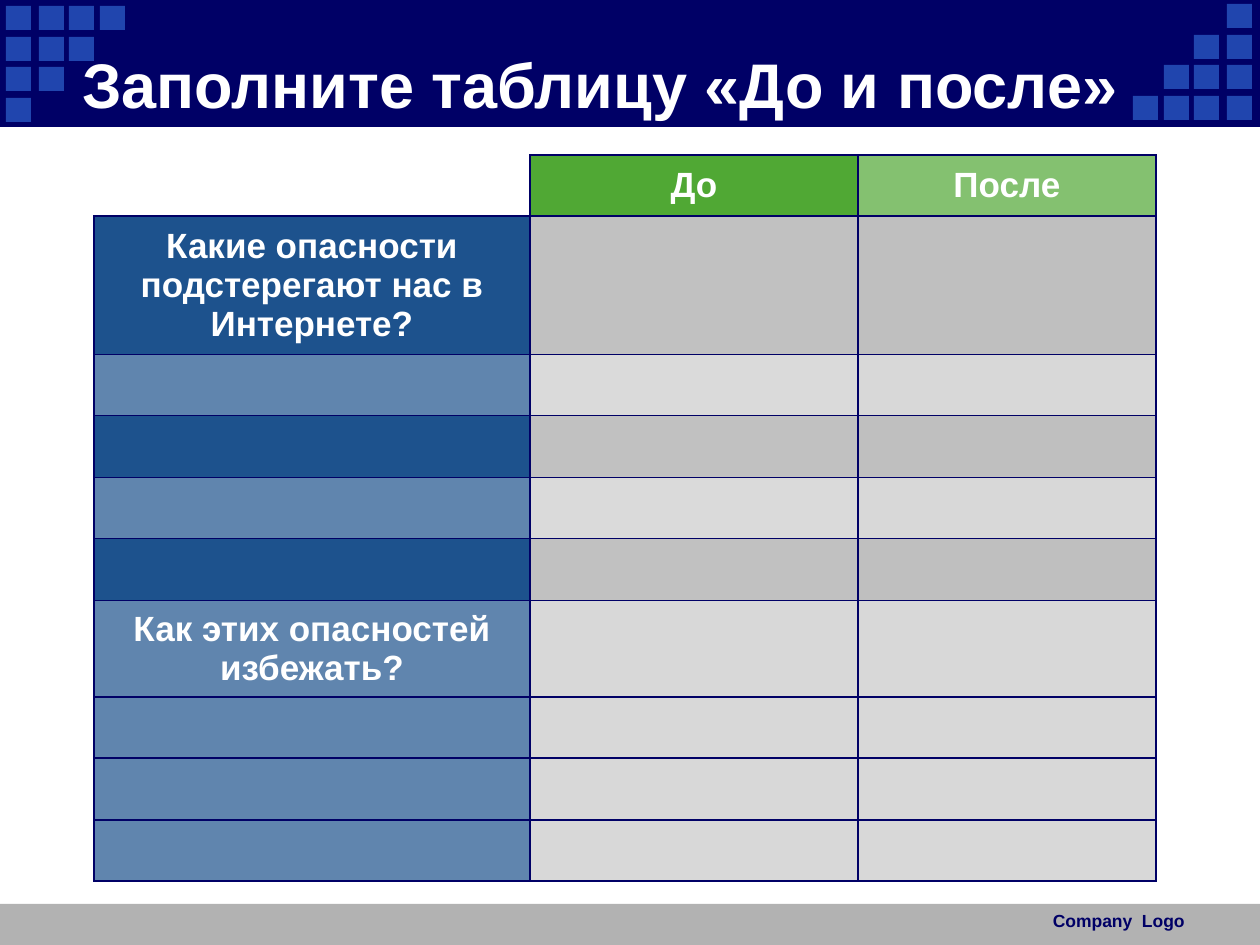
from dataclasses import dataclass

import lxml.etree
import pptx
import pptx.dml.color
import pptx.enum.shapes
import pptx.enum.text
import pptx.oxml.ns
import pptx.util

PX = 914400 // 126
ALIGN = pptx.enum.text.PP_ALIGN
MIDDLE = pptx.enum.text.MSO_ANCHOR.MIDDLE


@dataclass(frozen=True)
class Theme:
    font: str = "Arial"
    navy: str = "000066"
    square: str = "2045AE"
    gray: str = "B2B2B2"
    white: str = "FFFFFF"
    green: str = "50A834"
    blue: str = "1D528D"
    title_size: int = 36
    cell_size: int = 20
    footer_size: int = 10


THEME = Theme()
COLUMNS = [436, 328, 298]
ROWS = [61, 130, 61, 62, 61, 62, 91, 61, 62, 61]
LABELS = {
    (0, 1): "До",
    (0, 2): "После",
    (1, 0): "Какие опасности подстерегают нас в Интернете?",
    (6, 0): "Как этих опасностей избежать?",
}
DARK_BAND = [(THEME.blue, 100), (THEME.gray, 80), (THEME.gray, 82)]
LIGHT_BAND = [(THEME.blue, 70), (THEME.gray, 48), (THEME.gray, 50)]
PLAIN_BAND = [(THEME.blue, 70), (THEME.gray, 50), (THEME.gray, 50)]
HEADER = [None, (THEME.green, 100), (THEME.green, 70)]
BANDS = [HEADER] + [DARK_BAND, LIGHT_BAND] * 2 + [DARK_BAND] + [PLAIN_BAND] * 4


def px(*values):
    return [pptx.util.Emu(v * PX) for v in values]


def rgb(color):
    return pptx.dml.color.RGBColor.from_string(color)


def add_rect(s, box, color):
    sp = s.shapes.add_shape(pptx.enum.shapes.MSO_SHAPE.RECTANGLE, *px(*box))
    sp.shadow.inherit = False
    sp.fill.solid()
    sp.fill.fore_color.rgb = rgb(color)
    sp.line.fill.background()
    return sp


def write(tf, text, size, color, align):
    p = tf.paragraphs[0]
    p.alignment = align
    r = p.add_run()
    r.text = text
    r.font.name = THEME.font
    r.font.size = pptx.util.Pt(size)
    r.font.bold = True
    r.font.color.rgb = rgb(color)


def add_text(s, box, text, size, color, align, anchor):
    tf = s.shapes.add_textbox(*px(*box)).text_frame
    tf.word_wrap = True
    tf.vertical_anchor = anchor
    write(tf, text, size, color, align)


def add_squares(s):
    xs, ys = [6, 39, 69, 100], [6, 37, 67, 98]
    for row, y in enumerate(ys):
        for x in xs[:len(xs) - row]:
            add_rect(s, (x, y, 25, 24), THEME.square)
            add_rect(s, (1233 - x, 102 - y, 25, 24), THEME.square)


def set_borders(cell, sides):
    tc_pr = cell._tc.get_or_add_tcPr()
    qn = pptx.oxml.ns.qn
    for i, side in enumerate(sides):
        ln = lxml.etree.Element(qn(f"a:ln{side}"), w=str(pptx.util.Pt(1)))
        fill = lxml.etree.SubElement(ln, qn("a:solidFill"))
        lxml.etree.SubElement(fill, qn("a:srgbClr"), val=THEME.navy)
        tc_pr.insert(i, ln)


def fill_cell(cell, paint):
    if paint is None:
        cell.fill.background()
        return
    color, alpha = paint
    cell.fill.solid()
    cell.fill.fore_color.rgb = rgb(color)
    if alpha < 100:
        qn = pptx.oxml.ns.qn
        clr = cell._tc.tcPr.find(f".//{qn('a:srgbClr')}")
        lxml.etree.SubElement(clr, qn("a:alpha"), val=str(alpha * 1000))


def add_table(s):
    box = px(94, 155, sum(COLUMNS), sum(ROWS))
    table = s.shapes.add_table(len(ROWS), len(COLUMNS), *box).table
    table.first_row = False
    table.horz_banding = False
    for column, width in zip(table.columns, px(*COLUMNS)):
        column.width = width
    for i, height in enumerate(px(*ROWS)):
        table.rows[i].height = height
        for j, paint in enumerate(BANDS[i]):
            cell = table.cell(i, j)
            cell.vertical_anchor = MIDDLE
            fill_cell(cell, paint)
            set_borders(cell, "LRTB" if paint else "RB")
            if (i, j) in LABELS:
                write(cell.text_frame, LABELS[i, j], THEME.cell_size,
                      THEME.white, ALIGN.CENTER)


def main():
    prs = pptx.Presentation()
    prs.slide_width, prs.slide_height = px(1260, 945)
    s = prs.slides.add_slide(prs.slide_layouts[6])
    add_rect(s, (0, 904, 1260, 41), THEME.gray)
    band = add_rect(s, (0, 0, 1260, 126), THEME.navy)
    band.line.color.rgb = rgb(THEME.navy)
    band.line.width = pptx.util.Pt(0.75)
    add_squares(s)
    add_text(s, (987, 904, 210, 40), "Company  Logo", THEME.footer_size,
             THEME.navy, ALIGN.RIGHT, pptx.enum.text.MSO_ANCHOR.TOP)
    add_text(s, (25, 44, 1150, 78), "Заполните таблицу «До и после»",
             THEME.title_size, THEME.white, ALIGN.CENTER, MIDDLE)
    add_table(s)
    prs.save("out.pptx")


if __name__ == "__main__":
    main()
